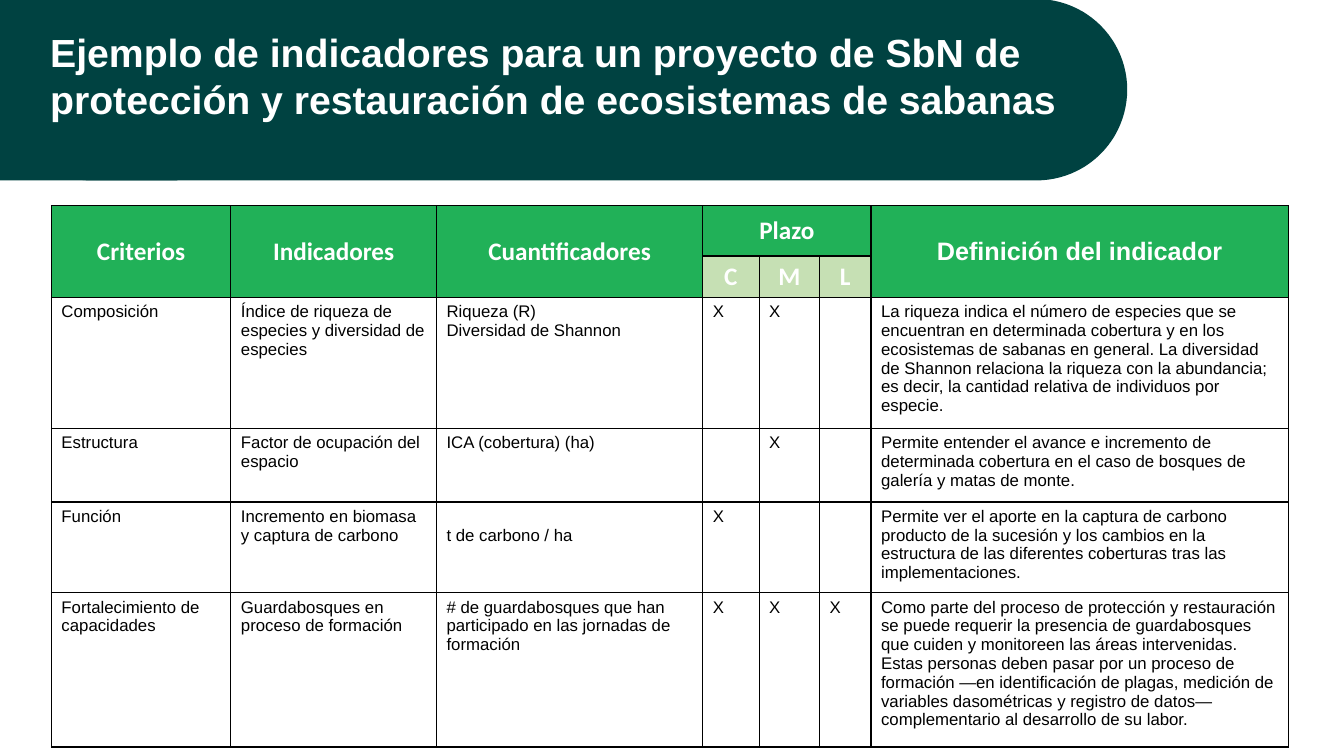
from lxml import etree
from pptx import Presentation, util as u
from pptx.dml.color import RGBColor
from pptx.enum import shapes, text
from pptx.oxml import ns

PX = 9144  # 100 px to the inch
TEAL = RGBColor(0x00, 0x42, 0x41)
GREEN = RGBColor(0x21, 0xB1, 0x58)
LIGHT_GREEN = RGBColor(0xC6, 0xE0, 0xB4)
WHITE = RGBColor(0xFF, 0xFF, 0xFF)
BLACK = RGBColor(0x00, 0x00, 0x00)

TITLE = ("Ejemplo de indicadores para un proyecto de SbN de protección "
         "y restauración de ecosistemas de sabanas")
COLUMNS = [178, 204, 264, 56, 60, 51, 414]
ROWS = [50, 41, 112, 73, 71, 153]

# Header cells: row, column, row span, column span, wording, font, fill
HEADERS = [
    (0, 0, 2, 1, "Criterios", "Calibri", GREEN),
    (0, 1, 2, 1, "Indicadores", "Calibri", GREEN),
    (0, 2, 2, 1, "Cuantificadores", "Calibri", GREEN),
    (0, 3, 1, 3, "Plazo", "Calibri", GREEN),
    (0, 6, 2, 1, "Definición del indicador", "Arial", GREEN),
    (1, 3, 1, 1, "C", "Calibri", LIGHT_GREEN),
    (1, 4, 1, 1, "M", "Calibri", LIGHT_GREEN),
    (1, 5, 1, 1, "L", "Calibri", LIGHT_GREEN),
]
INDICATORS = [
    ("Composición", "Índice de riqueza de especies y diversidad de especies",
     "Riqueza (R)\nDiversidad de Shannon", "X", "X", "",
     "La riqueza indica el número de especies que se encuentran en determinada "
     "cobertura y en los ecosistemas de sabanas en general. La diversidad de "
     "Shannon relaciona la riqueza con la abundancia; es decir, la cantidad "
     "relativa de individuos por especie."),
    ("Estructura", "Factor de ocupación del espacio",
     "ICA (cobertura) (ha)", "", "X", "",
     "Permite entender el avance e incremento de determinada cobertura en el "
     "caso de bosques de galería y matas de monte."),
    ("Función", "Incremento en biomasa y captura de carbono",
     "t de carbono / ha", "X", "", "",
     "Permite ver el aporte en la captura de carbono producto de la sucesión y "
     "los cambios en la estructura de las diferentes coberturas tras las "
     "implementaciones."),
    ("Fortalecimiento de capacidades", "Guardabosques en proceso de formación",
     "# de guardabosques que han participado en las jornadas de formación",
     "X", "X", "X",
     "Como parte del proceso de protección y restauración se puede requerir la "
     "presencia de guardabosques que cuiden y monitoreen las áreas intervenidas. "
     "Estas personas deben pasar por un proceso de formación —en identificación "
     "de plagas, medición de variables dasométricas y registro de datos— "
     "complementario al desarrollo de su labor."),
]
LOWERED_CELL = (4, 2)  # starts one line lower than its row


def emu(*lengths):
    return [u.Emu(length * PX) for length in lengths]


def write(frame, wording, size=12, font="Arial", color=BLACK, bold=False,
          align=text.PP_ALIGN.LEFT):
    for index, line in enumerate(wording.split("\n")):
        para = frame.paragraphs[0] if index == 0 else frame.add_paragraph()
        para.alignment = align
        para.font.size = u.Pt(size)
        if not line:
            continue
        span = para.add_run()
        span.text = line
        span.font.size = u.Pt(size)
        span.font.name = font
        span.font.bold = bold
        span.font.color.rgb = color


def paint(cell, color):
    """Fill a cell and rule its four sides."""
    cell.fill.solid()
    cell.fill.fore_color.rgb = color
    properties = cell._tc.get_or_add_tcPr()
    for index, side in enumerate(("a:lnL", "a:lnR", "a:lnT", "a:lnB")):
        line = etree.Element(ns.qn(side), w=str(u.Pt(1)))
        fill = etree.SubElement(line, ns.qn("a:solidFill"))
        etree.SubElement(fill, ns.qn("a:srgbClr"), val=str(BLACK))
        properties.insert(index, line)


def add_banner(page, left, top, width, height):
    # Square left end under a fully rounded bar
    for kind, length in ((shapes.MSO_SHAPE.RECTANGLE, 176),
                         (shapes.MSO_SHAPE.ROUNDED_RECTANGLE, width)):
        bar = page.shapes.add_shape(kind, *emu(left, top, length, height))
        bar.shadow.inherit = False
        bar.fill.solid()
        bar.fill.fore_color.rgb = TEAL
        bar.line.fill.background()
    bar.adjustments[0] = 0.5

    # Title
    box = page.shapes.add_textbox(*emu(left + 40, top + 24, width - 68, 104))
    box.text_frame.word_wrap = True
    write(box.text_frame, TITLE, size=28, color=WHITE, bold=True)


def add_indicator_table(page, left, top):
    area = emu(left, top, sum(COLUMNS), sum(ROWS))
    table = page.shapes.add_table(len(ROWS), len(COLUMNS), *area).table
    table.first_row = table.horz_banding = False
    for column, width in zip(table.columns, emu(*COLUMNS)):
        column.width = width
    for row, height in zip(table.rows, emu(*ROWS)):
        row.height = height

    # Header
    for row, column, down, across, wording, font, color in HEADERS:
        cell = table.cell(row, column)
        for i in range(row, row + down):
            for j in range(column, column + across):
                paint(table.cell(i, j), color)
        if down * across > 1:
            cell.merge(table.cell(row + down - 1, column + across - 1))
        cell.vertical_anchor = text.MSO_ANCHOR.MIDDLE
        write(cell.text_frame, wording, size=18, font=font, color=WHITE,
              bold=True, align=text.PP_ALIGN.CENTER)

    # Indicators
    for row, indicator in enumerate(INDICATORS, start=2):
        for column, wording in enumerate(indicator):
            cell = table.cell(row, column)
            paint(cell, WHITE)
            write(cell.text_frame, wording)
    table.cell(*LOWERED_CELL).margin_top = emu(24)[0]


def main():
    deck = Presentation()
    deck.slide_width, deck.slide_height = emu(1333, 750)
    page = deck.slides.add_slide(deck.slide_layouts[6])
    add_banner(page, 0, -1, 1118, 180)
    add_indicator_table(page, 51, 204)
    deck.save("out.pptx")


if __name__ == "__main__":
    main()
